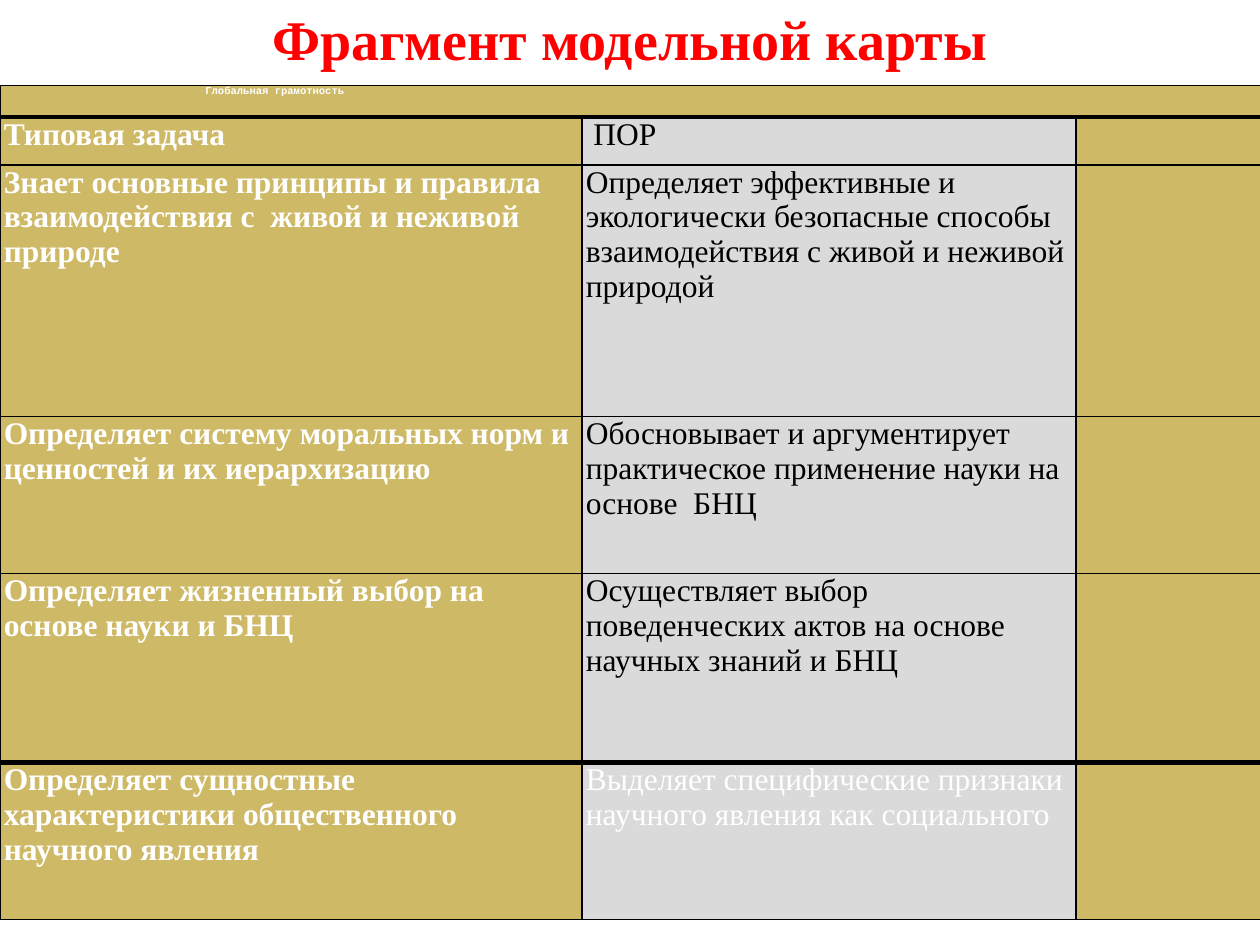
import dataclasses

import pptx
import pptx.dml.color
import pptx.enum.text
import pptx.oxml
import pptx.oxml.ns
import pptx.util

Inches = pptx.util.Inches


@dataclasses.dataclass(frozen=True)
class Theme:
    font: str = "Times New Roman"
    header_font: str = "Courier New"
    title_size: int = 32
    body_size: int = 18
    header_size: int = 6
    thin: int = 1
    thick: int = 3
    red: str = "FF0000"
    white: str = "FFFFFF"
    black: str = "000000"
    gold: str = "CEB966"
    grey: str = "DADADA"


THEME = Theme()
TITLE = "Фрагмент модельной карты"
HEADER = "Глобальная грамотность"
COLUMNS = [4.62, 3.92, 1.46]
ROW_HEIGHTS = [0.25, 0.38, 2, 1.25, 1.5, 1.25]
THICK_RULES = {1, 5}  # horizontal rules, counted from the table top
TASKS = [
    ("Типовая задача", "ПОР"),
    ("Знает основные принципы и правила взаимодействия с  живой и неживой природе",
     "Определяет эффективные и экологически безопасные способы "
     "взаимодействия с живой и неживой природой"),
    ("Определяет систему моральных норм и ценностей и их иерархизацию",
     "Обосновывает и аргументирует практическое применение науки на основе  БНЦ"),
    ("Определяет жизненный выбор на основе науки и БНЦ",
     "Осуществляет выбор поведенческих актов на основе научных знаний и БНЦ"),
    ("Определяет сущностные  характеристики общественного научного явления",
     "Выделяет специфические признаки научного явления как социального"),
]


def set_attributes(target, values):
    for name, value in values.items():
        setattr(target, name, value)


def write(p, text, size, color, bold, font=THEME.font):
    r = p.add_run()
    r.text = text
    set_attributes(r.font, {"name": font, "size": pptx.util.Pt(size), "bold": bold})
    r.font.color.rgb = pptx.dml.color.RGBColor.from_string(color)


def set_borders(cell, widths):
    """Draw the left, right, top and bottom borders, widths in points."""
    tcPr = cell._tc.get_or_add_tcPr()
    for i, (side, width) in enumerate(zip("LRTB", widths)):
        tcPr.insert(i, pptx.oxml.parse_xml(
            f'<a:ln{side} {pptx.oxml.ns.nsdecls("a")} w="{pptx.util.Pt(width)}">'
            f'<a:solidFill><a:srgbClr val="{THEME.black}"/></a:solidFill></a:ln{side}>'))


def add_title(slide, left, top, width, height):
    sp = slide.shapes.title
    set_attributes(sp, {"left": left, "top": top, "width": width, "height": height})
    tf = sp.text_frame
    set_attributes(tf, {"vertical_anchor": pptx.enum.text.MSO_ANCHOR.MIDDLE,
                        "word_wrap": True})
    p = tf.paragraphs[0]
    p.alignment = pptx.enum.text.PP_ALIGN.CENTER
    write(p, TITLE, THEME.title_size, THEME.red, True)


def add_task_table(slide, left, top, width, height):
    table = slide.shapes.add_table(
        len(ROW_HEIGHTS), len(COLUMNS), left, top, width, height).table
    set_attributes(table, {"first_row": False, "horz_banding": False})
    for column, share in zip(table.columns, COLUMNS):
        column.width = int(width * share / sum(COLUMNS))
    for row, share in zip(table.rows, ROW_HEIGHTS):
        row.height = int(height * share / sum(ROW_HEIGHTS))

    # Fills, margins and rules
    for i, row in enumerate(table.rows):
        rules = [THEME.thick if n in THICK_RULES else THEME.thin for n in (i, i + 1)]
        for j, cell in enumerate(row.cells):
            set_attributes(cell, {"margin_left": Inches(0.03), "margin_right": Inches(0.03),
                                  "margin_top": 0, "margin_bottom": 0})
            cell.fill.solid()
            fill = THEME.grey if i and j == 1 else THEME.gold
            cell.fill.fore_color.rgb = pptx.dml.color.RGBColor.from_string(fill)
            set_borders(cell, [THEME.thin, THEME.thin, *rules])

    # Header across all columns
    header = table.cell(0, 0)
    header.merge(table.cell(0, len(COLUMNS) - 1))
    header.margin_left = Inches(1.63)
    write(header.text_frame.paragraphs[0], HEADER, THEME.header_size,
          THEME.white, True, THEME.header_font)

    # Tasks and their outcomes; the last outcome is white
    for i, (task, outcome) in enumerate(TASKS, start=1):
        color = THEME.white if i == len(TASKS) else THEME.black
        write(table.cell(i, 0).text_frame.paragraphs[0], task,
              THEME.body_size, THEME.white, True)
        write(table.cell(i, 1).text_frame.paragraphs[0], outcome,
              THEME.body_size, color, False)
    table.cell(1, 1).margin_left = Inches(0.09)


def main():
    prs = pptx.Presentation()
    set_attributes(prs, {"slide_width": Inches(10), "slide_height": Inches(7.5)})
    slide = prs.slides.add_slide(prs.slide_layouts[5])
    add_task_table(slide, 0, Inches(0.68), prs.slide_width, Inches(6.62))
    add_title(slide, Inches(0.5), 0, Inches(9), Inches(0.6))
    prs.save("out.pptx")


if __name__ == "__main__":
    main()
